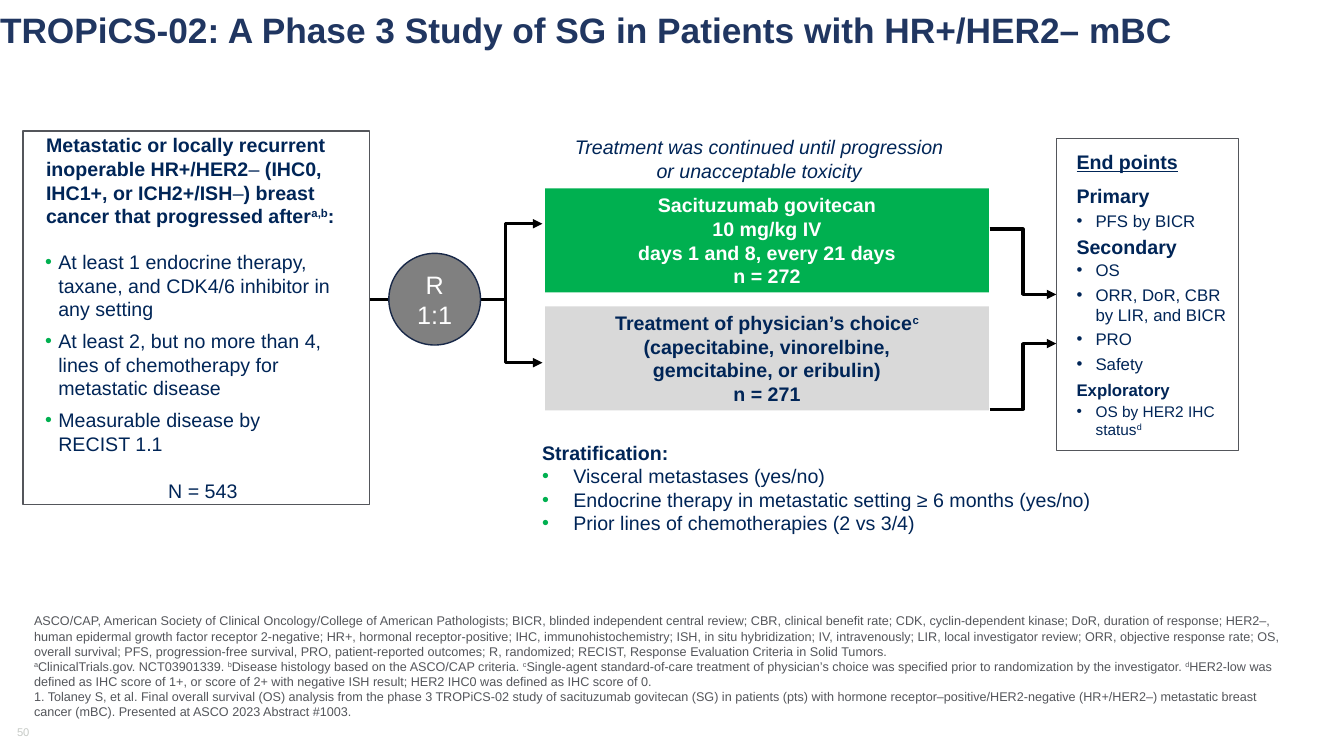
from dataclasses import dataclass

from lxml import etree
from pptx import Presentation
from pptx.dml.color import RGBColor
from pptx.enum.shapes import MSO_CONNECTOR, MSO_SHAPE
from pptx.enum.text import MSO_ANCHOR, MSO_AUTO_SIZE, PP_ALIGN
from pptx.oxml.ns import qn
from pptx.util import Cm, Pt

ELBOW = MSO_CONNECTOR.ELBOW
RECT, OVAL = MSO_SHAPE.RECTANGLE, MSO_SHAPE.OVAL
TOP, MID, LOW = MSO_ANCHOR.TOP, MSO_ANCHOR.MIDDLE, MSO_ANCHOR.BOTTOM
LEFT, CENTER = PP_ALIGN.LEFT, PP_ALIGN.CENTER
FIXED = MSO_AUTO_SIZE.NONE


@dataclass(frozen=True)
class Theme:
    font: str = "Arial"
    title: RGBColor = RGBColor(0x20, 0x36, 0x61)
    navy: RGBColor = RGBColor(0x00, 0x25, 0x57)
    green: RGBColor = RGBColor(0x00, 0xB0, 0x50)
    pale: RGBColor = RGBColor(0xD9, 0xD9, 0xD9)
    gray: RGBColor = RGBColor(0x80, 0x80, 0x80)
    rim: RGBColor = RGBColor(0x18, 0x28, 0x48)
    slate: RGBColor = RGBColor(0x54, 0x56, 0x5B)
    faint: RGBColor = RGBColor(0xC6, 0xCA, 0xC6)
    white: RGBColor = RGBColor(0xFF, 0xFF, 0xFF)
    black: RGBColor = RGBColor(0x00, 0x00, 0x00)
    head: float = 25.2
    large: float = 18
    body: float = 14
    small: float = 12
    mini: float = 11
    note: float = 9
    page: float = 8


T = Theme()


@dataclass(frozen=True)
class Box:
    x: float
    y: float
    w: float
    h: float

    def spot(self):
        return Cm(self.x), Cm(self.y), Cm(self.w), Cm(self.h)


def setup(shape, anchor, pads=(0.25, 0.13, 0.25, 0.13)):
    """Give the text frame fixed size, wrapping, anchor and left/top/right/bottom insets."""
    frame = shape.text_frame
    frame.auto_size, frame.word_wrap = FIXED, True
    frame.vertical_anchor = anchor
    frame.margin_left, frame.margin_top, frame.margin_right, frame.margin_bottom = map(Cm, pads)
    return frame


def paint(shape, fill, line=None, width=1):
    shape.shadow.inherit = False
    shape.fill.solid()
    shape.fill.fore_color.rgb = fill
    if line is None:
        shape.line.fill.background()
    else:
        shape.line.color.rgb = line
        shape.line.width = Pt(width)


def place(holder, box):
    holder.left, holder.top, holder.width, holder.height = box.spot()
    return holder


def add(frame, text, size=T.body, ink=T.navy, bold=False, align=LEFT, before=0, after=0,
        left=0, hang=0, dot=None):
    """Add a paragraph; ^ encloses superscript, ~ encloses light text, newline breaks the line."""
    para = frame.add_paragraph() if frame.text else frame.paragraphs[0]
    props = para._p.get_or_add_pPr()
    props.set("marL", str(Cm(left)))
    props.set("indent", str(-Cm(hang)))
    if dot is None:
        etree.SubElement(props, qn("a:buNone"))
    else:
        tint = etree.SubElement(props, qn("a:buClr"))
        etree.SubElement(tint, qn("a:srgbClr"), val=str(dot))
        etree.SubElement(props, qn("a:buFont"), typeface=T.font)
        etree.SubElement(props, qn("a:buChar"), char="•")
    para.alignment = align
    para.space_before, para.space_after = Pt(before), Pt(after)
    font = para.font
    font.name, font.size, font.bold = T.font, Pt(size), bold
    font.color.rgb = ink
    for i, chunk in enumerate(text.split("^")):
        for j, part in enumerate(chunk.split("~")):
            for k, line in enumerate(part.split("\n")):
                if k:
                    para.add_line_break()
                if not line:
                    continue
                run = para.add_run()
                run.text = line
                if i % 2:
                    run._r.get_or_add_rPr().set("baseline", "30000")
                if j % 2:
                    run.font.bold = False
    return para


def link(slide, start, end, bend=0.5):
    """Draw an elbow arrow that turns at the given share of its width."""
    wire = slide.shapes.add_connector(ELBOW, *map(Cm, start + end))
    wire.line.color.rgb = T.black
    wire.line.width = Pt(2.25)
    etree.SubElement(wire.line._get_or_add_ln(), qn("a:tailEnd"), type="triangle")
    props = wire._element.spPr
    guides = props.find(qn("a:prstGeom")).find(qn("a:avLst"))
    etree.SubElement(guides, qn("a:gd"), name="adj1", fmla=f"val {round(bend * 100000)}")
    etree.SubElement(props, qn("a:effectLst"))


def title(slide, box):
    frame = setup(place(slide.shapes.title, box), MID, (0, 0, 0, 0))
    add(frame, "TROPiCS-02: A Phase 3 Study of SG in Patients with HR+/HER2– mBC",
        T.head, T.title, True).line_spacing = 0.9


def cohort(slide, box):
    card = place(slide.placeholders[1], box)
    paint(card, T.white, T.slate)
    frame = setup(card, MID)
    add(frame, "Metastatic or locally recurrent inoperable HR+/HER2~–~ (IHC0, IHC1+, "
        "or ICH2+/ISH~–~) breast cancer that progressed after^a,b^:", bold=True, left=0.33)
    rules = ("At least 1 endocrine therapy, taxane, and CDK4/6 inhibitor in any setting",
             "At least 2, but no more than 4, lines of chemotherapy for metastatic disease",
             "Measurable disease by\nRECIST 1.1")
    for i, rule in enumerate(rules):
        add(frame, rule, before=6 if i else 16, left=0.64, hang=0.33, dot=T.green)
    add(frame, "N = 543", align=CENTER, before=17, left=0.33)


def strata(slide, box):
    frame = setup(place(slide.placeholders[2], box), TOP)
    add(frame, "Stratification:", bold=True)
    for text in ("Visceral metastases (yes/no)",
                 "Endocrine therapy in metastatic setting ≥ 6 months (yes/no)",
                 "Prior lines of chemotherapies (2 vs 3/4)"):
        add(frame, text, left=0.79, hang=0.79, dot=T.green)


def split(slide, box):
    """Draw the randomization circle in the box, with arrows from its left edge to the arms."""
    size = 2.31
    mid = box.y + 1.9
    for y, bend in ((box.y, 0.787), (box.y + box.h, 0.784)):
        link(slide, (box.x, mid), (box.x + box.w, y), bend)
    disc = slide.shapes.add_shape(OVAL, *Box(box.x + 0.48, mid - size / 2, size, size).spot())
    paint(disc, T.gray, T.rim)
    add(setup(disc, MID), "R\n1:1", T.large, T.white, align=CENTER)


def arms(slide, box):
    high, step = 2.62, 2.97
    note = slide.shapes.add_textbox(*Box(box.x - 1.88, box.y - 1.47, 14.55, 1.45).spot())
    add(setup(note, TOP), "Treatment was continued until progression\nor unacceptable toxicity",
        align=CENTER).font.italic = True
    plans = ((T.green, T.white, ("Sacituzumab govitecan", "10 mg/kg IV",
                                 "days 1 and 8, every 21 days", "n = 272")),
             (T.pale, T.navy, ("Treatment of physician’s choice^c^",
                               "(capecitabine, vinorelbine,\ngemcitabine, or eribulin)\nn = 271")))
    for i, (fill, ink, lines) in enumerate(plans):
        card = slide.shapes.add_shape(RECT, *Box(box.x, box.y + i * step, box.w, high).spot())
        paint(card, fill)
        frame = setup(card, MID)
        for line in lines:
            add(frame, line, ink=ink, bold=True, align=CENTER)


def goals(slide, box):
    """Draw the end points card and the two arrows that reach its left edge."""
    gap = 1.68
    for start, end in ((2.29, 3.94), (6.83, 5.18)):
        link(slide, (box.x - gap, box.y + start), (box.x, box.y + end))
    card = slide.shapes.add_shape(RECT, *box.spot())
    paint(card, T.white, T.slate, 0.75)
    frame = setup(card, MID, (0.51, 0.13, 0.25, 0.13))
    add(frame, "End points", bold=True, after=6).font.underline = True
    groups = (("Primary", T.body, T.small, ("PFS by BICR",)),
              ("Secondary", T.body, T.small,
               ("OS", "ORR, DoR, CBR\nby LIR, and BICR", "PRO", "Safety")),
              ("Exploratory", T.small, T.mini, ("OS by HER2 IHC status^d^",)))
    for name, size, small, items in groups:
        add(frame, name, size, bold=True, before=1.4, after=1.4)
        lone = name == "Primary"
        for item in items:
            add(frame, item, small, before=1.2 if lone else 0, after=1.2 if lone else 3,
                left=0.48, hang=0.48, dot=T.navy)


def notes(slide, box):
    frame = setup(slide.shapes.add_textbox(*box.spot()), LOW, (0, 0.13, 0, 0.13))
    for text in (
            "ASCO/CAP, American Society of Clinical Oncology/College of American Pathologists; "
            "BICR, blinded independent central review; CBR, clinical benefit rate; CDK, "
            "cyclin-dependent kinase; DoR, duration of response; HER2–, human epidermal growth "
            "factor receptor 2-negative; HR+, hormonal receptor-positive; IHC, "
            "immunohistochemistry; ISH, in situ hybridization; IV, intravenously; LIR, local "
            "investigator review; ORR, objective response rate; OS, overall survival; PFS, "
            "progression-free survival, PRO, patient-reported outcomes; R, randomized; RECIST, "
            "Response Evaluation Criteria in Solid Tumors.",
            "^a^ClinicalTrials.gov. NCT03901339. ^b^Disease histology based on the ASCO/CAP "
            "criteria. ^c^Single-agent standard-of-care treatment of physician’s choice was "
            "specified prior to randomization by the investigator. ^d^HER2-low was defined as "
            "IHC score of 1+, or score of 2+ with negative ISH result; HER2 IHC0 was defined as "
            "IHC score of 0.\n1. Tolaney S, et al. Final overall survival (OS) analysis from the "
            "phase 3 TROPiCS-02 study of sacituzumab govitecan (SG) in patients (pts) with "
            "hormone receptor–positive/HER2-negative (HR+/HER2–) metastatic breast cancer (mBC). "
            "Presented at ASCO 2023 Abstract #1003."):
        add(frame, text, T.note, T.slate)


def page(slide, box):
    add(setup(slide.shapes.add_textbox(*box.spot()), TOP), "50", T.page, T.faint)


def main():
    deck = Presentation()
    deck.slide_width, deck.slide_height = Cm(33.87), Cm(19.05)
    slide = deck.slides.add_slide(deck.slide_layouts[3])
    title(slide, Box(0, 0.38, 33.48, 0.86))
    cohort(slide, Box(0.58, 3.3, 8.74, 9.42))
    strata(slide, Box(13.41, 10.97, 15.09, 2.82))
    split(slide, Box(9.32, 5.64, 4.35, 3.5))
    arms(slide, Box(13.74, 4.75, 11.18, 5.59))
    goals(slide, Box(26.62, 3.48, 4.6, 7.87))
    page(slide, Box(0.18, 18.14, 1.35, 0.61))
    notes(slide, Box(0.86, 16.48, 31.6, 1.78))
    deck.save("out.pptx")


if __name__ == "__main__":
    main()
